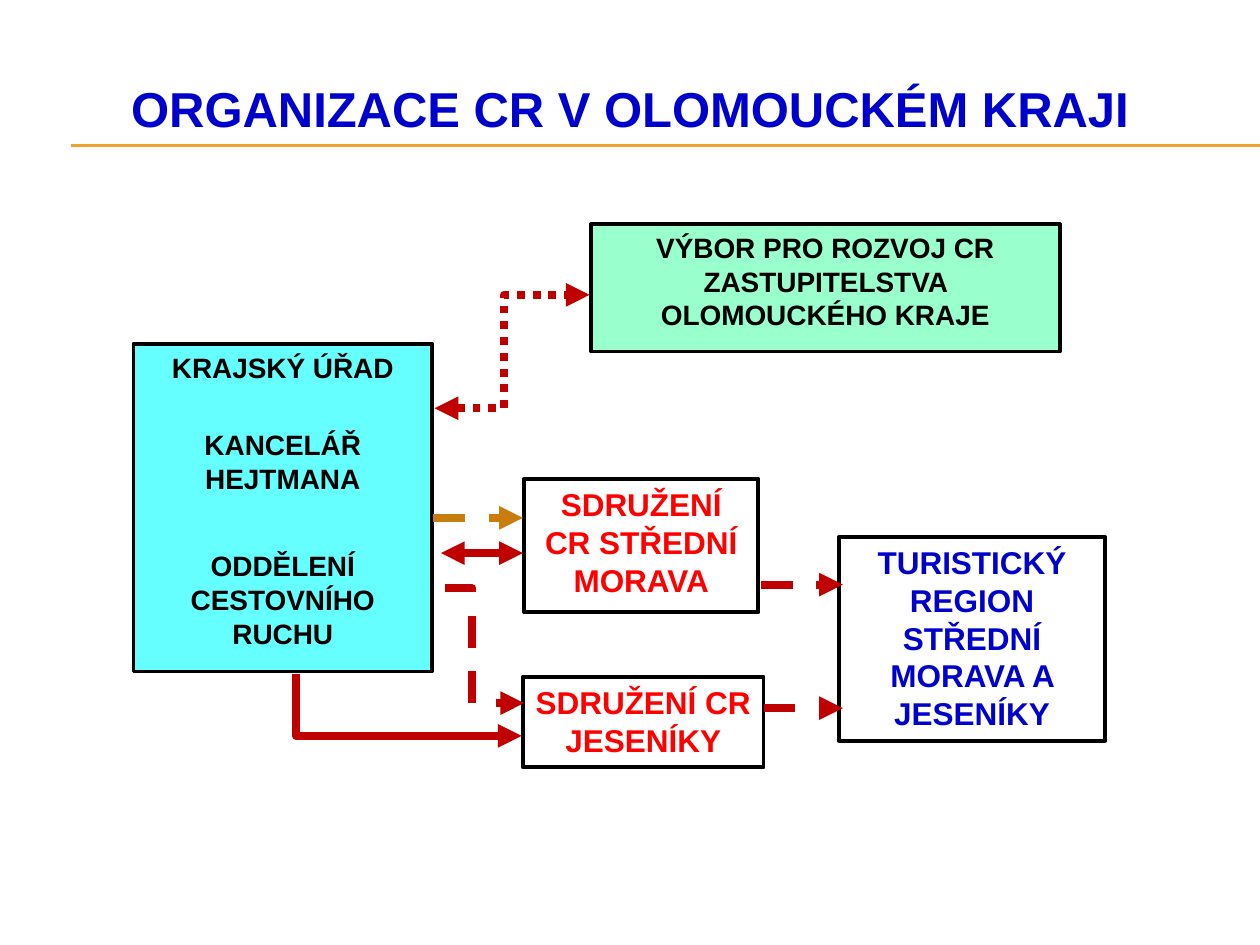
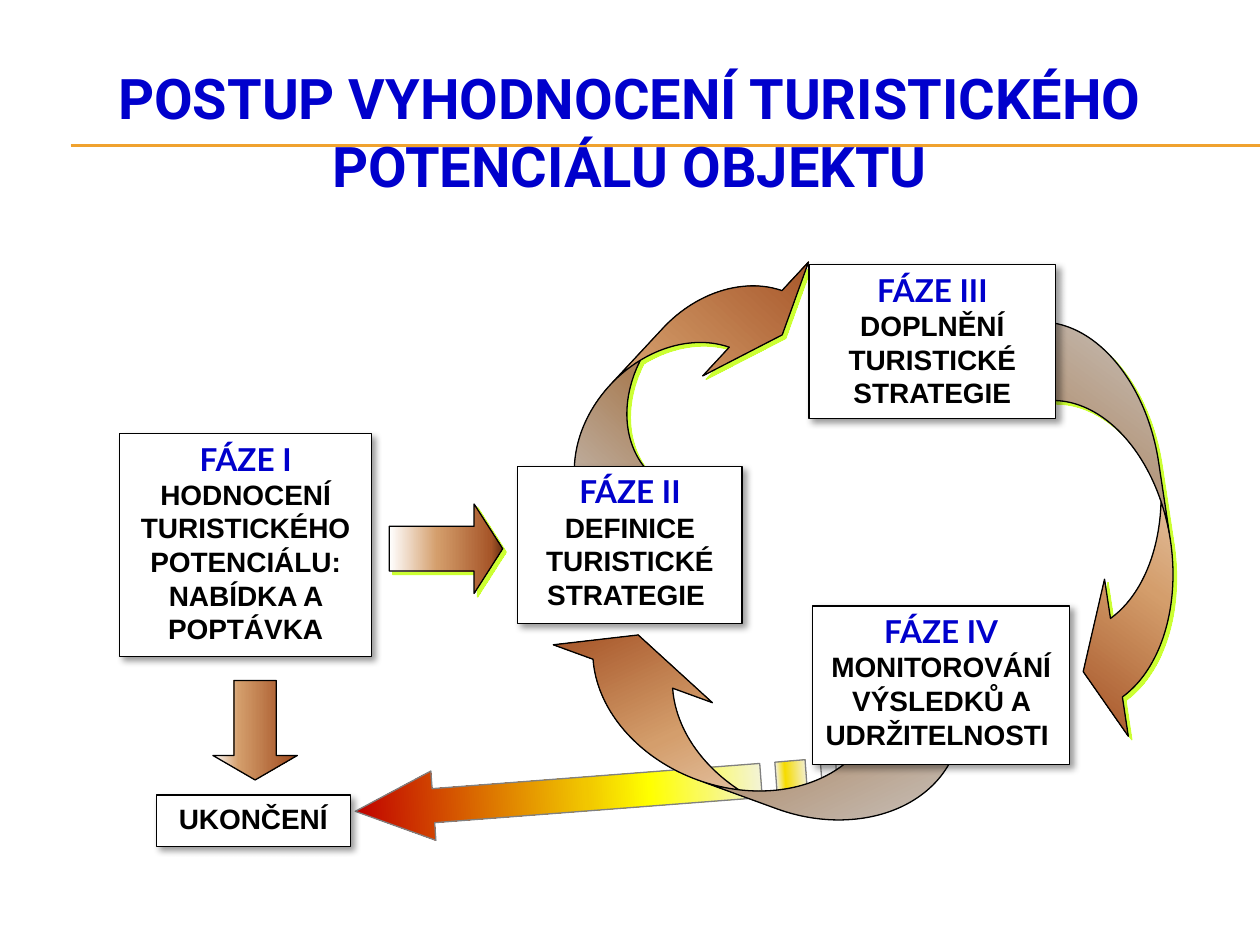
from dataclasses import dataclass

import lxml.etree
import pptx
import pptx.dml.color
import pptx.enum.dml
import pptx.enum.shapes
import pptx.enum.text
import pptx.oxml.ns
import pptx.util

COLUMNS, ROWS = 100, 75
SHAPE = pptx.enum.shapes.MSO_SHAPE
DASH = pptx.enum.dml.MSO_LINE.DASH
DOT = pptx.enum.dml.MSO_LINE.ROUND_DOT
ANCHOR = pptx.enum.text.MSO_ANCHOR


@dataclass(frozen=True)
class Theme:
    blue: str = "0000CC"
    black: str = "000000"
    white: str = "FFFFFF"
    red: str = "FF0000"
    dark_red: str = "C00000"
    ochre: str = "C87D0E"
    rule: str = "F0A22E"
    cyan: str = "66FFFF"
    mint: str = "99FFCC"
    grey: str = "808080"
    font: str = "Arial"
    phase_font: str = "Lato"
    title_font: str = "Roboto"
    body_size: int = 16
    label_size: int = 18
    thin: float = 0.75
    frame: float = 2.25
    flow: float = 4.5
    # colour, opacity %, blur, distance
    soft_shadow: tuple = ("000000", 40, 4, 3)
    lime_shadow: tuple = ("CCFF33", 100, 0, 2.8)
    fire: tuple = ((0, "C00000"), (48, "F1C700"), (61, "FFFF00"), (72, "FAFA63"),
                   (87, "F2F2F2"), (89, "F6DC00"), (94, "F2F2F2"), (100, "F2F2F2"))

    def bronze(self, tan_position):
        return ((0, self.white), (tan_position, "D49E6C"), (90, "A65528"), (100, "663012"))


THEME = Theme()


def rgb(color):
    return pptx.dml.color.RGBColor.from_string(color)


def add_node(parent, tag, **attributes):
    node = lxml.etree.SubElement(parent, pptx.oxml.ns.qn(tag))
    for name, value in attributes.items():
        node.set(name, str(value))
    return node


def find_node(shape, tag):
    return shape.element.spPr.find(pptx.oxml.ns.qn(tag))


def write(frame, text, size=THEME.body_size, font=THEME.font, color=THEME.black, before=0):
    """Add one bold centred paragraph to a text frame."""
    paragraph = frame.add_paragraph() if frame.text else frame.paragraphs[0]
    paragraph.alignment = pptx.enum.text.PP_ALIGN.CENTER
    paragraph.space_before = pptx.util.Pt(before)
    run = paragraph.add_run()
    run.text = text
    run.font.bold = True
    run.font.size = pptx.util.Pt(size)
    run.font.name = font
    run.font.color.rgb = rgb(color)


class Deck:
    def __init__(self, theme):
        self.theme = theme
        self.presentation = pptx.Presentation()
        self.presentation.slide_width = pptx.util.Inches(10)
        self.presentation.slide_height = pptx.util.Inches(7.5)
        self.layout = self.presentation.slide_layouts[5]
        self.slide = None

    def x(self, column):
        return round(self.presentation.slide_width * column / COLUMNS)

    def y(self, row):
        return round(self.presentation.slide_height * row / ROWS)

    def area(self, left, top, width, height):
        return self.x(left), self.y(top), self.x(width), self.y(height)

    def add_slide(self, title, height, **text_format):
        self.slide = self.presentation.slides.add_slide(self.layout)
        shape = self.slide.shapes.title
        shape.left, shape.top, shape.width, shape.height = self.area(5, 4.2, 90, height)
        frame = shape.text_frame
        frame.auto_size = pptx.enum.text.MSO_AUTO_SIZE.NONE
        frame.vertical_anchor = ANCHOR.MIDDLE
        write(frame, title, color=self.theme.blue, **text_format)

    def add_rules_to_layout(self):
        """Draw the double title rule and move it to the shared layout."""
        for row in (11.5, 11.6):
            rule = self.line((5.6, row), (100, row), self.theme.rule, self.theme.thin)
            self.layout.shapes.element.append(rule.element)

    def outline(self, shape, color, width, dash=None, head=False, tail=False):
        shape.line.color.rgb = rgb(color)
        shape.line.width = pptx.util.Pt(width)
        if dash:
            shape.line.dash_style = dash
        line = find_node(shape, "a:ln")
        if head or tail:
            add_node(line, "a:round")
        for wanted, tag in ((head, "a:headEnd"), (tail, "a:tailEnd")):
            if wanted:
                add_node(line, tag, type="triangle")

    def gradient(self, shape, stops, angle):
        shape.fill.gradient()
        fill = find_node(shape, "a:gradFill")
        stop_list = fill.find(pptx.oxml.ns.qn("a:gsLst"))
        for stop in list(stop_list):
            stop_list.remove(stop)
        for position, color in stops:
            stop = add_node(stop_list, "a:gs", pos=position * 1000)
            add_node(stop, "a:srgbClr", val=color)
        fill.find(pptx.oxml.ns.qn("a:lin")).set("ang", str(angle * 60000))

    def shadow(self, shape, style):
        shape.shadow.inherit = False
        if style:
            color, opacity, blur, distance = style
            effect = add_node(find_node(shape, "a:effectLst"), "a:outerShdw",
                              blurRad=pptx.util.Pt(blur), dist=pptx.util.Pt(distance),
                              dir=45 * 60000, algn="ctr", rotWithShape=0)
            add_node(add_node(effect, "a:srgbClr", val=color), "a:alpha", val=opacity * 1000)

    def line(self, start, end, color, width, **line_format):
        connector = self.slide.shapes.add_connector(
            pptx.enum.shapes.MSO_CONNECTOR.STRAIGHT,
            self.x(start[0]), self.y(start[1]), self.x(end[0]), self.y(end[1]))
        self.outline(connector, color, width, **line_format)
        add_node(connector.element.spPr, "a:effectLst")
        return connector

    def freeform(self, contours, closed):
        points = [[(self.x(column), self.y(row)) for column, row in contour]
                  for contour in contours]
        builder = self.slide.shapes.build_freeform(*points[0][0])
        for index, contour in enumerate(points):
            if index:
                builder.move_to(*contour[0])
            builder.add_line_segments(contour[1:], close=closed)
        shape = builder.convert_to_shape()
        self.shadow(shape, None)
        return shape

    def elbow(self, points, **line_format):
        shape = self.freeform([points], closed=False)
        shape.fill.background()
        self.outline(shape, self.theme.dark_red, self.theme.flow, tail=True, **line_format)

    def box(self, area, fill=THEME.white, border=THEME.frame, shadow=None, side_inset=1):
        """Add a framed rectangle and return its text frame."""
        shape = self.slide.shapes.add_shape(SHAPE.RECTANGLE, *self.area(*area))
        shape.fill.solid()
        shape.fill.fore_color.rgb = rgb(fill)
        self.outline(shape, self.theme.black, border)
        self.shadow(shape, shadow)
        frame = shape.text_frame
        frame.word_wrap = True
        frame.vertical_anchor = ANCHOR.TOP
        frame.margin_left = frame.margin_right = self.x(side_inset)
        return frame

    def phase(self, area, text, name=None):
        frame = self.box(area, border=self.theme.thin, shadow=self.theme.soft_shadow)
        if name:
            write(frame, name, size=self.theme.label_size, font=self.theme.phase_font,
                  color=self.theme.blue)
        write(frame, text)

    def block_arrow(self, kind, area, adjustments, tan, angle=0, rotation=0, shadow=None):
        shape = self.slide.shapes.add_shape(kind, *self.area(*area))
        for index, value in enumerate(adjustments):
            shape.adjustments[index] = value
        shape.rotation = rotation
        self.gradient(shape, self.theme.bronze(tan), angle)
        self.outline(shape, self.theme.black, self.theme.thin)
        self.shadow(shape, shadow)


def build_organisation(deck):
    theme = deck.theme
    deck.add_slide("ORGANIZACE CR V OLOMOUCKÉM KRAJI", 8.8, size=28)
    deck.add_rules_to_layout()

    office = deck.box((10.6, 27.3, 23.7, 26), fill=theme.cyan)
    for text, before in (("KRAJSKÝ ÚŘAD", 0), ("KANCELÁŘ HEJTMANA", 25),
                         ("ODDĚLENÍ CESTOVNÍHO RUCHU", 31)):
        write(office, text, before=before)

    for area, text, color, side_inset in (
            ((41.6, 38, 18.6, 10.6), "SDRUŽENÍ CR STŘEDNÍ MORAVA", theme.red, 1),
            ((66.6, 42.6, 21.1, 16.2), "TURISTICKÝ REGION STŘEDNÍ MORAVA A JESENÍKY",
             theme.blue, 1),
            ((41.5, 53.7, 19.1, 7.2), "SDRUŽENÍ CR JESENÍKY", theme.red, 0.2)):
        write(deck.box(area, side_inset=side_inset), text, size=theme.label_size, color=color)
    committee = deck.box((46.9, 17.8, 37.2, 10.1), fill=theme.mint)
    write(committee, "VÝBOR PRO ROZVOJ CR ZASTUPITELSTVA OLOMOUCKÉHO KRAJE")

    deck.elbow([(34.5, 32.4), (40, 32.4), (40, 23.4), (46.8, 23.4)], dash=DOT, head=True)
    deck.elbow([(35.3, 46.7), (37.5, 46.7), (37.5, 55.8), (41.6, 55.8)], dash=DASH)
    deck.elbow([(23.5, 53.5), (23.5, 58.4), (41.4, 58.4)])
    for left, right, row, color, line_format in (
            (35, 41.5, 43.9, theme.dark_red, {"head": True}),
            (34.4, 41.5, 41.1, theme.ochre, {"dash": DASH}),
            (60.6, 66.9, 56.2, theme.dark_red, {"dash": DASH}),
            (60.4, 66.9, 46.4, theme.dark_red, {"dash": DASH})):
        deck.line((left, row), (right, row), color, theme.flow, tail=True, **line_format)


def build_evaluation(deck):
    theme = deck.theme
    deck.add_slide("POSTUP VYHODNOCENÍ TURISTICKÉHO POTENCIÁLU OBJEKTU", 12.4,
                   size=32, font=theme.title_font)
    frame = deck.slide.shapes.title.text_frame
    frame.margin_left = frame.margin_right = frame.margin_top = frame.margin_bottom = 0

    exit_arrow = deck.freeform([
        [(34.6, 66.7), (34.5, 65.3), (60.5, 63.3), (60.3, 60.6), (34.3, 62.6),
         (34.2, 61.2), (28.2, 64.4)],
        [(64.1, 63.1), (63.9, 60.3), (61.5, 60.5), (61.7, 63.2)],
        [(66.5, 62.9), (66.3, 60.1), (65.1, 60.2), (65.3, 63)]], closed=True)
    deck.gradient(exit_arrow, theme.fire, 356)
    deck.outline(exit_arrow, theme.grey, theme.thin)

    deck.block_arrow(SHAPE.DOWN_ARROW, (16.9, 54, 6.7, 7.9), (0.5, 0.29), 30)
    deck.phase((12.4, 63.1, 15.4, 4.1), "UKONČENÍ")
    deck.block_arrow(SHAPE.CURVED_LEFT_ARROW, (53.9, 41.4, 9.2, 33.5), (0.73, 1.46, 0.33),
                     56, angle=135, rotation=110)
    deck.phase((9.5, 34.4, 20, 17.7),
               "HODNOCENÍ TURISTICKÉHO POTENCIÁLU: NABÍDKA A POPTÁVKA", "FÁZE I")
    deck.block_arrow(SHAPE.RIGHT_ARROW, (30.9, 40, 9, 7.1), (0.5, 0.32), 42,
                     shadow=theme.lime_shadow)
    deck.block_arrow(SHAPE.CURVED_LEFT_ARROW, (84.3, 24.8, 8.4, 34.3), (0.75, 1.5, 0.33),
                     56, angle=135, rotation=351.4, shadow=theme.lime_shadow)
    deck.block_arrow(SHAPE.CURVED_DOWN_ARROW, (40.5, 26, 27.5, 7.3), (0.84, 1.69, 0.33),
                     42, rotation=312.9, shadow=theme.lime_shadow)
    deck.phase((41.1, 37, 17.8, 12.5), "DEFINICE TURISTICKÉ STRATEGIE ", "FÁZE II")
    deck.phase((64.2, 21, 19.6, 12.2), "DOPLNĚNÍ TURISTICKÉ STRATEGIE", "FÁZE III")
    deck.phase((64.5, 48.1, 20.4, 12.6), "MONITOROVÁNÍ VÝSLEDKŮ A UDRŽITELNOSTI ", "FÁZE IV")


def main():
    deck = Deck(THEME)
    build_organisation(deck)
    build_evaluation(deck)
    deck.presentation.save("out.pptx")


if __name__ == "__main__":
    main()
